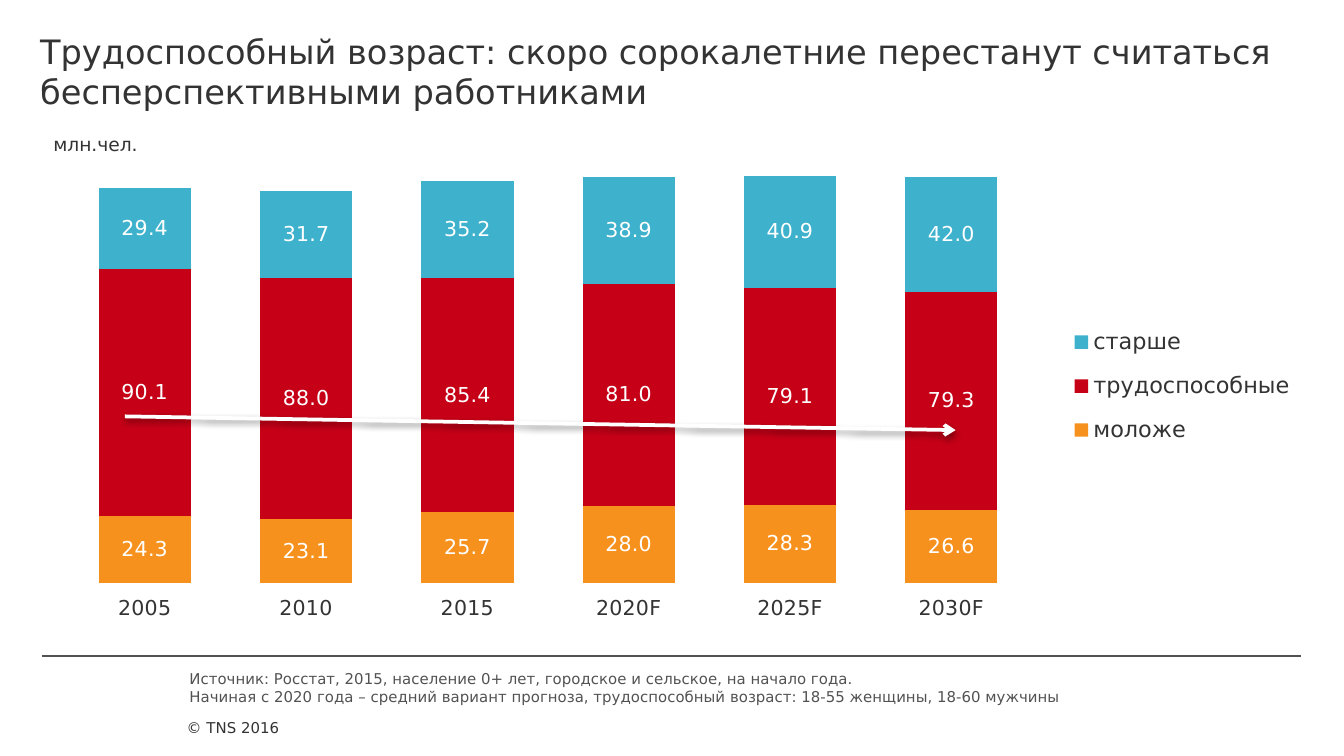
from lxml import etree
from pptx import Presentation
from pptx.chart.data import CategoryChartData
from pptx.dml.color import RGBColor
from pptx.enum.chart import XL_CHART_TYPE, XL_LABEL_POSITION, XL_LEGEND_POSITION, XL_TICK_MARK
from pptx.enum.shapes import MSO_CONNECTOR
from pptx.enum.text import MSO_ANCHOR, MSO_AUTO_SIZE, PP_ALIGN
from pptx.oxml import parse_xml
from pptx.oxml.ns import qn
from pptx.util import Cm, Pt

STACKED = XL_CHART_TYPE.COLUMN_STACKED
CENTER = XL_LABEL_POSITION.CENTER
RIGHT = XL_LEGEND_POSITION.RIGHT
OUTSIDE, NO_TICK = XL_TICK_MARK.OUTSIDE, XL_TICK_MARK.NONE
STRAIGHT = MSO_CONNECTOR.STRAIGHT
TOP, MIDDLE, BOTTOM = MSO_ANCHOR.TOP, MSO_ANCHOR.MIDDLE, MSO_ANCHOR.BOTTOM
LEFT = PP_ALIGN.LEFT
NO_FIT = MSO_AUTO_SIZE.NONE

FONT = "DejaVu Sans"
COLORS = {"text": "333333", "grey": "525252", "white": "FFFFFF",
          "young": "F7911E", "working": "C50017", "older": "3EB1CC"}
C_NS = "http://schemas.openxmlformats.org/drawingml/2006/chart"
A_NS = "http://schemas.openxmlformats.org/drawingml/2006/main"


def style_font(font, size, color):
    for name, value in {"name": FONT, "size": Pt(size), "bold": False}.items():
        setattr(font, name, value)
    font.color.rgb = RGBColor.from_string(COLORS[color])


def manual_layout(inner, **box):
    target = '<c:layoutTarget val="inner"/>' if inner else ""
    modes = "".join(f'<c:{k}Mode val="edge"/>' for k in "xy")
    sizes = "".join(f'<c:{k} val="{v}"/>' for k, v in box.items())
    return parse_xml(f'<c:layout xmlns:c="{C_NS}"><c:manualLayout>'
                     f'{target}{modes}{sizes}</c:manualLayout></c:layout>')


prs = Presentation()
prs.slide_width, prs.slide_height = Cm(25.4), Cm(14.29)
s = prs.slides.add_slide(prs.slide_layouts[1])

chart_data = CategoryChartData(number_format="0.0")
chart_data.categories = ["2005", "2010", "2015", "2020F", "2025F", "2030F"]
series = [
    ("моложе", "young", [24.3, 23.1, 25.7, 28.0, 28.3, 26.6]),
    ("трудоспособные", "working", [90.1, 88.0, 85.4, 81.0, 79.1, 79.3]),
    ("старше", "older", [29.4, 31.7, 35.2, 38.9, 40.9, 42.0]),
]
for name, color, values in series:
    chart_data.add_series(name, values)
chart = s.shapes.add_chart(STACKED, Cm(0.76), Cm(2.26), Cm(23.85), Cm(10.08), chart_data).chart
chart.has_title = False
style_font(chart.font, 12, "text")

plot = chart.plots[0]
plot.gap_width, plot.overlap, plot.vary_by_categories = 75, 100, False
for ser, (name, color, values) in zip(plot.series, series):
    ser.format.fill.solid()
    ser.format.fill.fore_color.rgb = RGBColor.from_string(COLORS[color])
    labels = ser.data_labels
    for attr, value in {"show_value": True, "position": CENTER, "number_format": "0.0",
                        "number_format_is_linked": False}.items():
        setattr(labels, attr, value)
    style_font(labels.font, 11, "white")

axis = chart.category_axis
axis.major_tick_mark, axis.minor_tick_mark = OUTSIDE, NO_TICK
axis.format.line.fill.background()
style_font(axis.tick_labels.font, 11, "text")
axis = chart.value_axis
for attr, value in {"visible": False, "has_major_gridlines": False, "minimum_scale": 0,
                    "maximum_scale": 160, "major_unit": 10}.items():
    setattr(axis, attr, value)

chart.has_legend = True
chart.legend.position, chart.legend.include_in_layout = RIGHT, False
style_font(chart.legend.font, 12, "text")
legend = chart.legend._element
legend.find(qn("c:legendPos")).addnext(manual_layout(False, x=0.81, y=0.36, w=0.19, h=0.28))
area = chart._chartSpace.chart.plotArea
for old in area.findall(qn("c:layout")):
    area.remove(old)
area.insert(0, manual_layout(True, x=0.019, y=0.045, w=0.767, h=0.824))

lines = [
    ((0.79, 12.4, 24.59, 12.4), "grey", 0.75),
    ((2.36, 7.87, 18.06, 8.13), "white", 2),
]
for ends, color, width in lines:
    line = s.shapes.add_connector(STRAIGHT, *[Cm(v) for v in ends])
    line.line.color.rgb = RGBColor.from_string(COLORS[color])
    line.line.width = Pt(width)
    effects = etree.SubElement(line._element.spPr, qn("a:effectLst"))
trend = line
etree.SubElement(trend.line._get_or_add_ln(), qn("a:tailEnd"), type="arrow")
effects.append(parse_xml(
    f'<a:outerShdw xmlns:a="{A_NS}" blurRad="{Pt(3.1)}" dist="{Pt(1.6)}" dir="5400000" '
    'rotWithShape="0"><a:srgbClr val="000000"><a:alpha val="38000"/></a:srgbClr></a:outerShdw>'))

title, source = s.placeholders
unit = s.shapes.add_textbox(0, 0, Cm(1), Cm(1))
rights = s.shapes.add_textbox(0, 0, Cm(1), Cm(1))
texts = [
    (title, (0, 0, 25.4, 2.26), (0.76, 0.58, 0.76, 0), TOP, True, 18, "text",
     ["Трудоспособный возраст: скоро сорокалетние перестанут считаться бесперспективными работниками"]),
    (source, (3.58, 12.62, 16.89, 0.76), (0, 0, 0, 0), MIDDLE, True, 8, "grey",
     ["Источник: Росстат, 2015, население 0+ лет, городское и сельское, на начало года.",
      "Начиная с 2020 года – средний вариант прогноза, трудоспособный возраст: 18-55 женщины, 18-60 мужчины"]),
    (unit, (0.76, 2.39, 2.11, 0.69), (0.25, 0.13, 0.25, 0.13), TOP, False, 10, "text", ["млн.чел."]),
    (rights, (3.28, 13.44, 2.31, 0.61), (0.25, 0.13, 0.25, 0.13), BOTTOM, False, 8, "text", ["© TNS 2016"]),
]
for sp, box, insets, anchor, wrap, size, color, paragraphs in texts:
    for attr, value in zip(("left", "top", "width", "height"), box):
        setattr(sp, attr, Cm(value))
    tf = sp.text_frame
    for attr, value in zip(("margin_left", "margin_top", "margin_right", "margin_bottom"), insets):
        setattr(tf, attr, Cm(value))
    for attr, value in {"vertical_anchor": anchor, "word_wrap": wrap, "auto_size": NO_FIT}.items():
        setattr(tf, attr, value)
    tf.text = "\n".join(paragraphs)
    for p in tf.paragraphs:
        p.alignment, p.space_before = LEFT, Pt(0)
        if sp is source:
            pPr = p._p.get_or_add_pPr()
            pPr.set("marL", "0")
            pPr.set("indent", "0")
            etree.SubElement(pPr, qn("a:buNone"))
        for r in p.runs:
            style_font(r.font, size, color)

prs.save("out.pptx")
